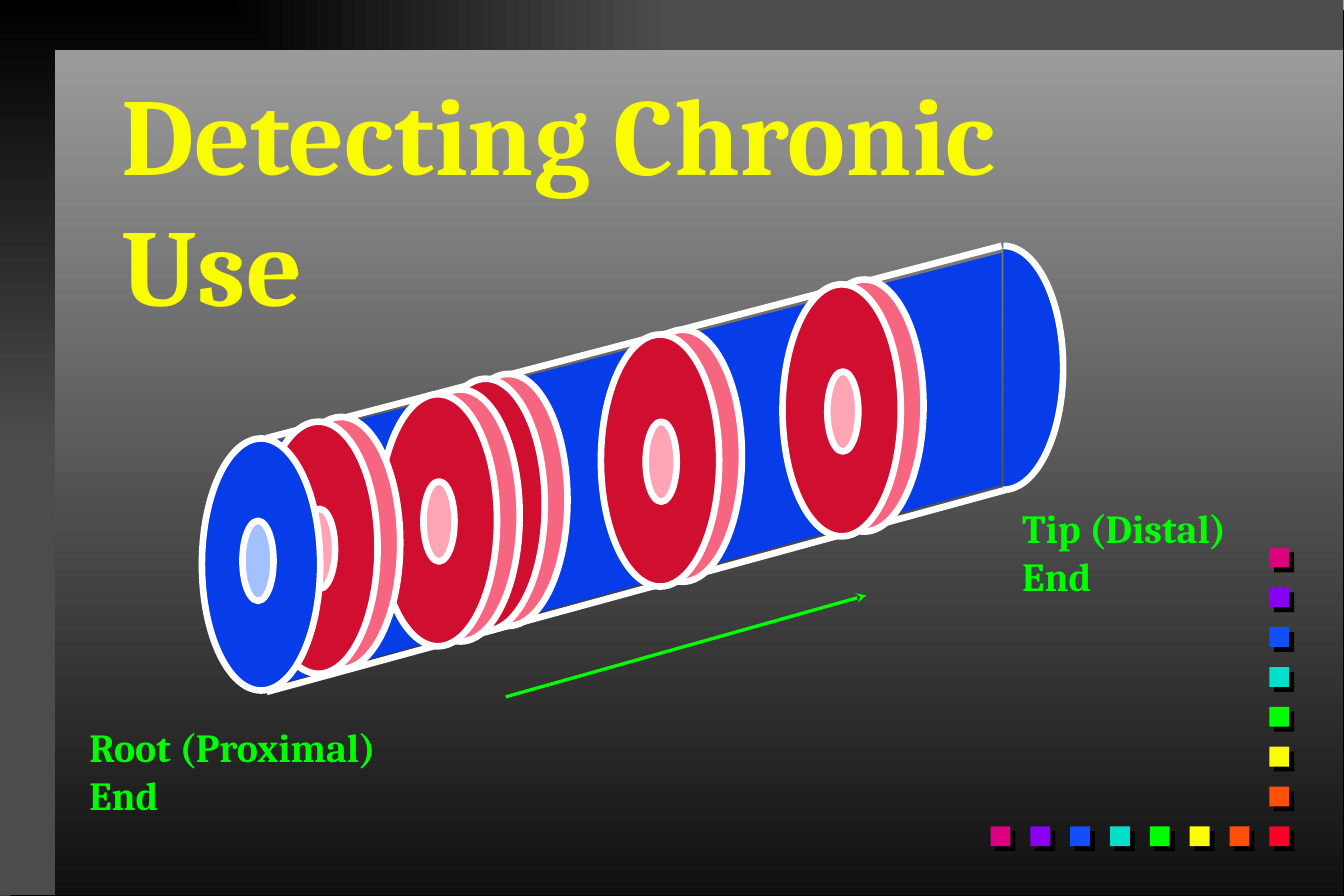
from dataclasses import dataclass
from typing import NamedTuple

from lxml.etree import SubElement
from pptx import Presentation
from pptx.dml.color import RGBColor
from pptx.dml.fill import FillFormat
from pptx.enum.shapes import MSO_CONNECTOR as Link, MSO_SHAPE as Preset
from pptx.enum.text import MSO_ANCHOR as Anchor, PP_ALIGN as Align
from pptx.oxml.ns import qn
from pptx.shapes.autoshape import Shape
from pptx.shapes.connector import Connector
from pptx.text.text import TextFrame
from pptx.util import Emu, Inches, Pt

WIDTH, HEIGHT = Inches(11.25), Inches(7.5)
COLUMNS, ROWS = 135, 90


@dataclass(frozen=True)
class Theme:
    font: str = "Cambria"
    title_size: int = 66
    label_size: int = 24
    outline_width: int = 4
    arrow_width: int = 2
    title: str = "FAFD00"
    label: str = "00FF00"
    outline: str = "FFFFFF"
    hair: str = "063DE8"
    root_hole: str = "A2C1FE"
    band: str = "CF0E30"
    band_rim: str = "F76681"
    band_hole: str = "FDA4B5"
    shadow: str = "000000"
    frame: tuple[str, str] = ("000000", "4C4C4C")
    panel: tuple[str, str] = ("9B9B9B", "101010")
    backdrop: tuple[str, str] = ("A1A1A1", "3B3B3B")
    rainbow: tuple[str, ...] = ("FC0128", "FF5008", "FAFD00", "00FF00",
                                "00DFCA", "114FFB", "8901F3", "DC0081")


class Box(NamedTuple):
    column: float
    row: float
    columns: float
    rows: float


class Cell(NamedTuple):
    column: float
    row: float


class Ellipse(NamedTuple):
    offset: Cell
    size: Cell
    color: str


class Label(NamedTuple):
    lines: tuple[str, ...]
    box: Box


THEME = Theme()
DISC = Cell(11.88, 25.32)
HOLE = Cell(3.12, 8.04)
BAND = (Ellipse(Cell(2.28, -0.48), DISC, THEME.band_rim),
        Ellipse(Cell(0, 0), DISC, THEME.band),
        Ellipse(Cell(4.5, 8.76), HOLE, THEME.band_hole))
ROOT = (Ellipse(Cell(0, 0), DISC, THEME.hair),
        Ellipse(Cell(4.08, 8.28), HOLE, THEME.root_hole))
BAND_CELLS = (Cell(78.6, 28.56), Cell(60.36, 33.6), Cell(42.84, 38.04),
              Cell(38.04, 39.6), Cell(26.04, 42.36))
ROOT_CELL = Cell(20.28, 44.04)
HAIR_SIDE = (Cell(27, 44.5), Cell(27, 69), Cell(100.6, 48.7), Cell(100.6, 25.4))
HAIR_EDGES = ((Cell(26.8, 69.5), Cell(101.8, 49)), (Cell(26.8, 44), Cell(100.6, 24.7)))
HAIR_TIP = Box(94.8, 24.7, 12, 24.5)
GROWTH = (Cell(50.8, 70), Cell(87, 59.8))
TITLE = Label(("Detecting Chronic Use",), Box(11, 6, 108.1, 14.4))
LABELS = (Label(("Root (Proximal)", "End"), Box(7.8, 72, 31.2, 10.8)),
          Label(("Tip (Distal)", "End"), Box(101.5, 50, 23.7, 10.8)))
FRAME = Box(0, 0, 134.9, 89.9)
PANEL = Box(5.5, 5, 129.4, 84.9)
CORNER = Cell(127.5, 83)
SQUARE, PITCH = 2, 4


def across(columns: float) -> Emu:
    return Emu(round(WIDTH * columns / COLUMNS))


def down(rows: float) -> Emu:
    return Emu(round(HEIGHT * rows / ROWS))


def place(box: Box) -> tuple[Emu, Emu, Emu, Emu]:
    return across(box.column), down(box.row), across(box.columns), down(box.rows)


def paint(fill: FillFormat, color: str) -> None:
    fill.solid()
    fill.fore_color.rgb = RGBColor.from_string(color)


def shade(fill: FillFormat, colors: tuple[str, str]) -> None:
    fill.gradient()
    fill.gradient_angle = 270
    for stop, color in zip(fill.gradient_stops, colors):
        stop.color.rgb = RGBColor.from_string(color)


def spread_from_corner(shape: Shape) -> None:
    gradient = shape._element.spPr.find(qn("a:gradFill"))
    gradient.remove(gradient.find(qn("a:lin")))
    spread = SubElement(gradient, qn("a:path"), {"path": "rect"})
    SubElement(spread, qn("a:fillToRect"), {"r": "100000", "b": "100000"})


def cast_shadow(shape: Shape, distance: float) -> None:
    effects = shape._element.spPr.find(qn("a:effectLst"))
    shadow = SubElement(effects, qn("a:outerShdw"),
                        {"dist": str(Pt(distance)), "dir": "2700000", "algn": "ctr"})
    SubElement(shadow, qn("a:srgbClr"), {"val": THEME.shadow})


def outline(shape: Shape) -> None:
    shape.line.color.rgb = RGBColor.from_string(THEME.outline)
    shape.line.width = Pt(THEME.outline_width)


def add_preset(shapes, preset: Preset, box: Box) -> Shape:
    shape = shapes.add_shape(preset, *place(box))
    shape.shadow.inherit = False
    shape.line.fill.background()
    return shape


def add_template(slide) -> None:
    shade(slide.background.fill, THEME.backdrop)
    frame = add_preset(slide.shapes, Preset.RECTANGLE, FRAME)
    shade(frame.fill, THEME.frame)
    spread_from_corner(frame)
    panel = add_preset(slide.shapes, Preset.RECTANGLE, PANEL)
    shade(panel.fill, THEME.panel)
    for sheet in (frame, panel):
        cast_shadow(sheet, 8.5)
    squares = [(step, 0, color) for step, color in enumerate(THEME.rainbow)]
    squares += [(0, step, color) for step, _, color in squares[1:]]
    for left, up, color in squares:
        box = Box(CORNER.column - PITCH * left, CORNER.row - PITCH * up, SQUARE, SQUARE)
        square = add_preset(slide.shapes, Preset.RECTANGLE, box)
        paint(square.fill, color)
        cast_shadow(square, 4.2)


def add_line(slide, ends: tuple[Cell, Cell], color: str, width: int) -> Connector:
    start, end = ends
    line = slide.shapes.add_connector(Link.STRAIGHT, across(start.column), down(start.row),
                                      across(end.column), down(end.row))
    line.line.color.rgb = RGBColor.from_string(color)
    line.line.width = Pt(width)
    SubElement(line._element.spPr, qn("a:effectLst"))
    return line


def add_disc(slide, cell: Cell, ellipses: tuple[Ellipse, ...]) -> None:
    disc = slide.shapes.add_group_shape()
    for offset, size, color in ellipses:
        box = Box(cell.column + offset.column, cell.row + offset.row, *size)
        ellipse = add_preset(disc.shapes, Preset.OVAL, box)
        paint(ellipse.fill, color)
        outline(ellipse)


def add_hair(slide) -> None:
    for edge in HAIR_EDGES:
        add_line(slide, edge, THEME.outline, THEME.outline_width)
    first, *others = [(across(cell.column), down(cell.row)) for cell in HAIR_SIDE]
    builder = slide.shapes.build_freeform(*first)
    builder.add_line_segments(others)
    side = builder.convert_to_shape()
    side.shadow.inherit = False
    side.line.fill.background()
    tip = add_preset(slide.shapes, Preset.ARC, HAIR_TIP)
    tip.adjustments[1] = 54
    outline(tip)
    for part in (side, tip):
        paint(part.fill, THEME.hair)
    for cell in BAND_CELLS:
        add_disc(slide, cell, BAND)
    add_disc(slide, ROOT_CELL, ROOT)


def write(frame: TextFrame, lines: tuple[str, ...], size: int, color: str) -> None:
    frame.text = "\n".join(lines)
    frame.word_wrap = True
    frame.vertical_anchor = Anchor.TOP
    for paragraph in frame.paragraphs:
        paragraph.alignment = Align.LEFT
        paragraph.font.name = THEME.font
        paragraph.font.size = Pt(size)
        paragraph.font.bold = True
        paragraph.font.color.rgb = RGBColor.from_string(color)


def main() -> None:
    deck = Presentation()
    deck.slide_width, deck.slide_height = WIDTH, HEIGHT
    slide = deck.slides.add_slide(deck.slide_layouts[5])
    add_template(slide)
    add_hair(slide)
    title = slide.shapes.title
    title.left, title.top, title.width, title.height = place(TITLE.box)
    write(title.text_frame, TITLE.lines, THEME.title_size, THEME.title)
    slide.shapes._spTree.append(title._element)
    for label in LABELS:
        text = slide.shapes.add_textbox(*place(label.box))
        write(text.text_frame, label.lines, THEME.label_size, THEME.label)
    arrow = add_line(slide, GROWTH, THEME.label, THEME.arrow_width)
    SubElement(arrow.line._get_or_add_ln(), qn("a:tailEnd"), {"type": "stealth"})
    deck.save("out.pptx")


if __name__ == "__main__":
    main()
